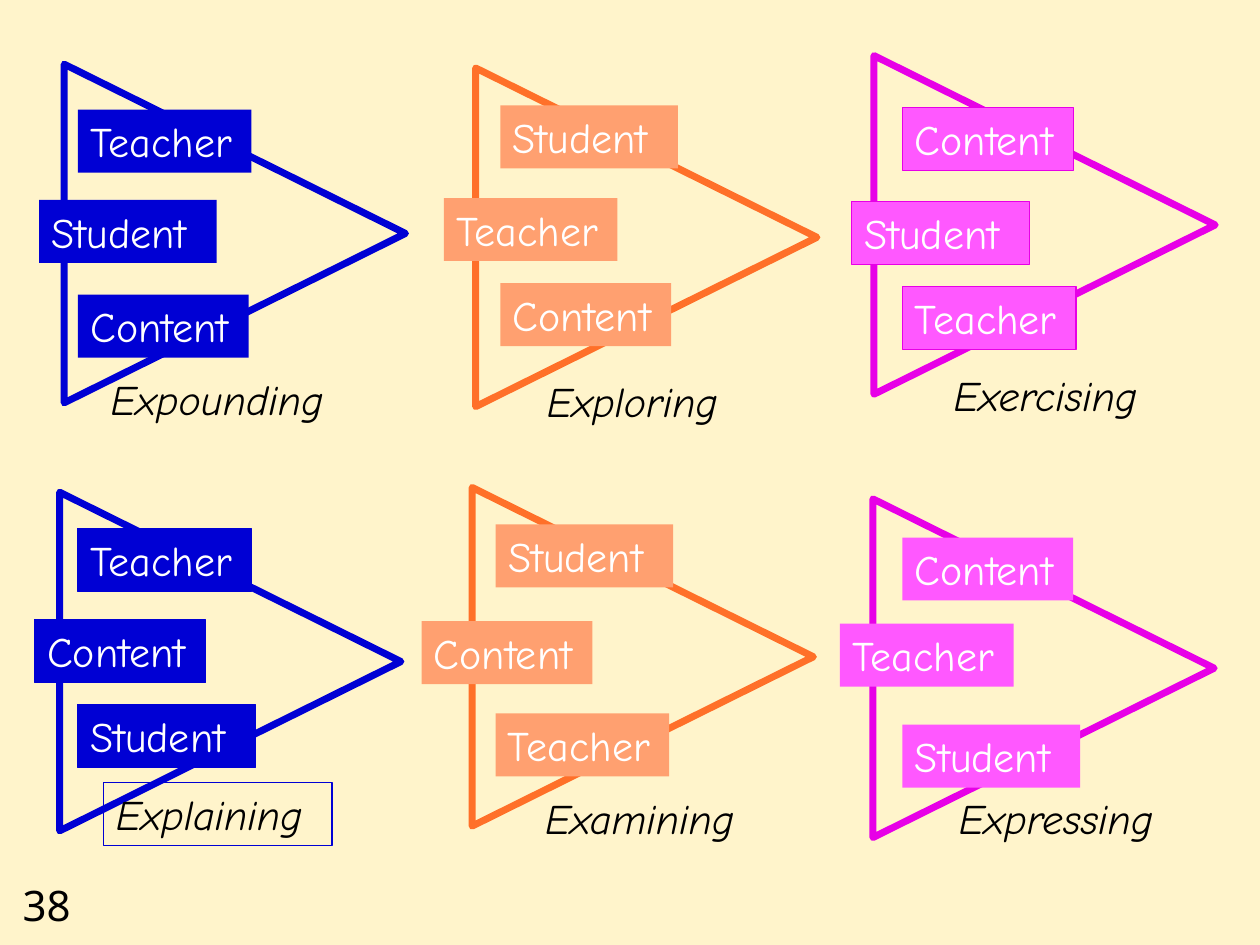
import pptx
import pptx.dml.color
import pptx.enum.shapes
import pptx.enum.text
import pptx.oxml
import pptx.oxml.ns
import pptx.util

Pt = pptx.util.Pt
THEME = {
    "background": "FFF2C0", "background_alpha": 82000,
    "label": {"name": "Comic Neue", "size": Pt(24), "color": "FFFFFF"},
    "caption": {"name": "Comic Neue", "size": Pt(24), "color": "000000", "italic": True},
    "number": {"name": "Noto Sans", "size": Pt(24), "color": "000000"},
    "blue": {"line": "0000D4", "fill": "0000D4"},
    "orange": {"line": "FF7029", "fill": "FFA070"},
    "magenta": {"line": "E700E7", "fill": "FF58FF"},
    "triangle_line": 4, "border_line": 0.75,
}
WORD_WIDTH = {"Teacher": 99.2, "Student": 101.5, "Content": 97.6}
BOX_HEIGHT = 36
TRIANGLE_WIDTH, TRIANGLE_HEIGHT = 195, 193.5

MODES = [
    {"name": "Expounding", "hue": "blue", "corner": (36.7, 36.7), "caption": (56.2, 210, 174),
     "wrap": True,
     "labels": [("Teacher", 44.5, 62.7), ("Student", 22.3, 114.3), ("Content", 44.5, 168.4)]},
    {"name": "Examining", "hue": "orange", "corner": (269.8, 278.6), "caption": (304.4, 449.5, 129.6),
     "labels": [("Student", 283.2, 299.7), ("Content", 240.9, 355), ("Teacher", 283.2, 407.7)]},
    {"name": "Expressing", "hue": "magenta", "corner": (498.8, 285.1), "caption": (540.9, 449.5, 136.8),
     "labels": [("Content", 515.7, 307.2), ("Teacher", 480, 356.4), ("Student", 515.7, 414.1)]},
    {"name": "Explaining", "hue": "blue", "corner": (34.1, 281.3), "caption": (59.2, 447.1, 130.6),
     "bordered": True, "boxed_caption": True,
     "labels": [("Teacher", 44.4, 301.9), ("Content", 19.9, 354.2), ("Student", 44.4, 402.6)]},
    {"name": "Exploring", "hue": "orange", "corner": (271.8, 38.9), "caption": (305.4, 211.1, 122.4),
     "labels": [("Student", 285.9, 60.2), ("Teacher", 253.7, 113.2), ("Content", 285.9, 161.8)]},
    {"name": "Exercising", "hue": "magenta", "corner": (499.4, 31.8), "caption": (537.9, 207.8, 132.5),
     "bordered": True,
     "labels": [("Content", 515.7, 61.3), ("Student", 486.7, 115), ("Teacher", 515.7, 163.7)]},
]


def rgb(value):
    return pptx.dml.color.RGBColor.from_string(value)


def set_line(line, color, width):
    line.color.rgb = rgb(color)
    line.width = Pt(width)


def write(s, text, style, wrap=False):
    tf = s.text_frame
    frame = {"margin_left": Pt(7.2), "margin_right": Pt(7.2),
             "margin_top": Pt(3.6), "margin_bottom": Pt(3.6),
             "vertical_anchor": pptx.enum.text.MSO_ANCHOR.TOP,
             "word_wrap": wrap,
             "auto_size": pptx.enum.text.MSO_AUTO_SIZE.SHAPE_TO_FIT_TEXT}
    for key, value in frame.items():
        setattr(tf, key, value)
    p = tf.paragraphs[0]
    p.alignment = pptx.enum.text.PP_ALIGN.LEFT
    r = p.add_run()
    r.text = text
    for key, value in style.items():
        if key == "color":
            r.font.color.rgb = rgb(value)
        else:
            setattr(r.font, key, value)


def add_box(shapes, text, left, top, width, style, fill=None, border=None):
    s = shapes.add_shape(pptx.enum.shapes.MSO_SHAPE.RECTANGLE,
                         Pt(left), Pt(top), Pt(width), Pt(BOX_HEIGHT))
    s.shadow.inherit = False
    if fill:
        s.fill.solid()
        s.fill.fore_color.rgb = rgb(fill)
    else:
        s.fill.background()
    if border:
        set_line(s.line, border, THEME["border_line"])
    else:
        s.line.fill.background()
    write(s, text, style)


def add_caption(shapes, text, left, top, width, style, wrap=False):
    s = shapes.add_textbox(Pt(left), Pt(top), Pt(width), Pt(BOX_HEIGHT))
    write(s, text, style, wrap)


def add_triangle(shapes, left, top, color):
    builder = shapes.build_freeform(Pt(left), Pt(top))
    builder.add_line_segments([
        (Pt(left), Pt(top + TRIANGLE_HEIGHT)),
        (Pt(left + TRIANGLE_WIDTH), Pt(top + TRIANGLE_HEIGHT / 2)),
    ])
    s = builder.convert_to_shape()
    s.shadow.inherit = False
    s.fill.background()
    set_line(s.line, color, THEME["triangle_line"])
    ln = s.element.spPr.find(pptx.oxml.ns.qn("a:ln"))
    ln.append(pptx.oxml.parse_xml("<a:round %s/>" % pptx.oxml.ns.nsdecls("a")))


def add_mode(slide, mode):
    hue = THEME[mode["hue"]]
    shapes = slide.shapes.add_group_shape().shapes
    add_triangle(shapes, *mode["corner"], hue["line"])
    border = hue["line"] if mode.get("bordered") else None
    for word, left, top in mode["labels"]:
        add_box(shapes, word, left, top, WORD_WIDTH[word], THEME["label"], hue["fill"], border)
    if mode.get("boxed_caption"):
        add_box(shapes, mode["name"], *mode["caption"], THEME["caption"], border=border)
    else:
        add_caption(shapes, mode["name"], *mode["caption"], THEME["caption"],
                    mode.get("wrap", False))


def set_background(slide):
    fill = slide.background.fill
    fill.solid()
    fill.fore_color.rgb = rgb(THEME["background"])
    color = slide.element.find(".//" + pptx.oxml.ns.qn("a:srgbClr"))
    color.append(pptx.oxml.parse_xml('<a:alpha %s val="%d"/>' % (
        pptx.oxml.ns.nsdecls("a"), THEME["background_alpha"])))


def main():
    prs = pptx.Presentation()
    prs.slide_width, prs.slide_height = Pt(720), Pt(540)
    slide = prs.slides.add_slide(prs.slide_layouts[6])
    set_background(slide)
    add_caption(slide.shapes, "38", 5.8, 499, 54, THEME["number"], wrap=True)
    for mode in MODES:
        add_mode(slide, mode)
    prs.save("out.pptx")


if __name__ == "__main__":
    main()
